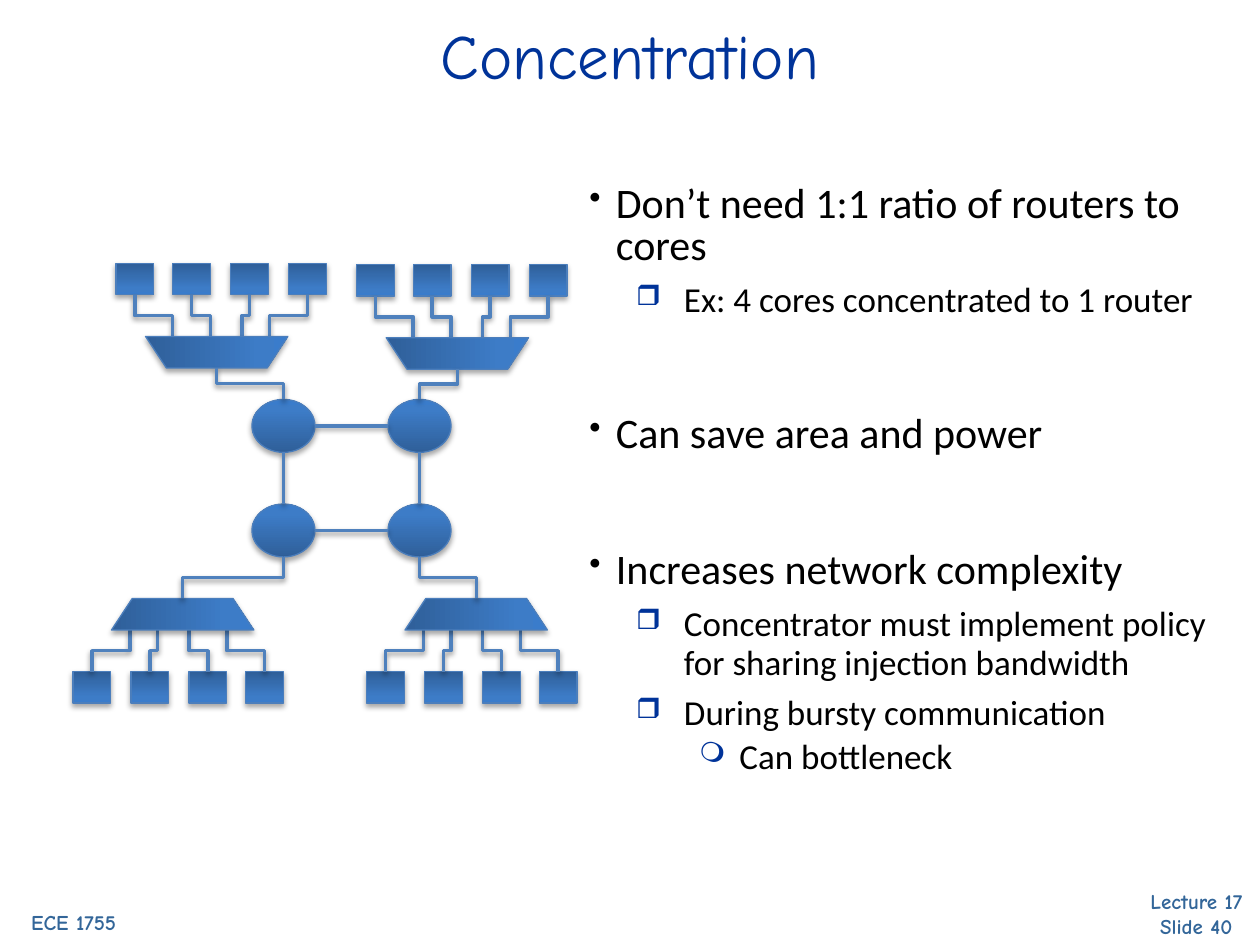
"""Build the Concentration slide: four core clusters sharing a network of four routers."""
from dataclasses import dataclass
from itertools import product

from lxml.etree import SubElement
from pptx import Presentation
from pptx.dml.color import RGBColor
from pptx.enum.shapes import MSO_CONNECTOR, MSO_SHAPE
from pptx.enum.text import PP_ALIGN
from pptx.oxml import parse_xml
from pptx.oxml.ns import nsdecls, qn
from pptx.util import Inches, Pt


@dataclass(frozen=True)
class Theme:
    heading_font: str = "Comic Neue"
    body_font: str = "Calibri"
    navy: str = "003399"
    footer: str = "336699"
    black: str = "000000"
    outline: str = "4B7EBC"
    wire: str = "4F81BD"
    gradient: tuple = ((0, "2F5F99"), (80, "3D7CC7"), (100, "3A7CCB"))
    title_size: int = 36
    footer_size: int = 12
    point_size: int = 24
    detail_size: int = 20


@dataclass(frozen=True)
class Level:
    bullet: str
    color: str
    size: int
    margin: float
    hanging: float
    line: int
    before: int


@dataclass(frozen=True)
class Point:
    text: str
    level: int = 0
    gap: int = 0


@dataclass(frozen=True)
class Cluster:
    center: float
    inner: float
    direction: int
    router: tuple


THEME = Theme()
LEVELS = (
    Level("•", THEME.black, THEME.point_size, 0.21, 0.21, 24, 15),
    Level("❒", THEME.navy, THEME.detail_size, 0.75, 0.38, 22, 7),
    Level("❍", THEME.navy, THEME.detail_size, 1.19, 0.32, 20, 5),
)
SECTION_GAP = 39
POINTS = (
    Point("Don’t need 1:1 ratio of routers to cores"),
    Point("Ex: 4 cores concentrated to 1 router", 1),
    Point("Can save area and power", gap=SECTION_GAP),
    Point("Increases network complexity", gap=SECTION_GAP),
    Point("Concentrator must implement policy for sharing injection bandwidth", 1),
    Point("During bursty communication", 1),
    Point("Can bottleneck", 2),
)
ROUTER_COLUMNS, ROUTER_ROWS = (2.25, 3.33), (3.38, 4.21)
ROUTER_WIDTH, ROUTER_HEIGHT = 0.5, 0.42
CORE_WIDTH, BLOCK_HEIGHT, WIRE_HEIGHT = 0.3, 0.25, 0.33
CONCENTRATOR_WIDTH = 1.13
CORE_OFFSETS = (0.72, 0.26, -0.2, -0.65)
PORT_OFFSETS = (0.42, 0.2, -0.05, -0.35)
CLUSTERS = (
    Cluster(1.72, 2.92, -1, (0, 0)),
    Cluster(1.45, 4.75, 1, (0, 1)),
    Cluster(3.63, 2.93, -1, (1, 0)),
    Cluster(3.78, 4.75, 1, (1, 1)),
)


def add_box(page, left: float, top: float, width: float, height: float):
    """Add an empty wrapping text box."""
    box = page.shapes.add_textbox(Inches(left), Inches(top), Inches(width), Inches(height))
    box.text_frame.word_wrap = True
    return box


def write(box, text: str, *, font: str, size: int, color: str, bold: bool = False,
          align=PP_ALIGN.LEFT, level: int | None = None, gap: int = 0) -> None:
    """Write one paragraph into a box, bulleted when a level is given."""
    frame = box.text_frame
    para = frame.add_paragraph() if frame.text else frame.paragraphs[0]
    para.text = text
    para.alignment = align
    for span in para.runs:
        span.font.name, span.font.size, span.font.bold = font, Pt(size), bold
        span.font.color.rgb = RGBColor.from_string(color)
    if level is None:
        return
    style = LEVELS[level]
    para.level = level
    para.line_spacing = Pt(style.line)
    para.space_before = Pt(style.before + gap)
    properties = para._p.get_or_add_pPr()
    properties.set("marL", str(Inches(style.margin)))
    properties.set("indent", str(-Inches(style.hanging)))
    bullet_color = SubElement(properties, qn("a:buClr"))
    SubElement(bullet_color, qn("a:srgbClr"), val=style.color)
    SubElement(properties, qn("a:buSzPct"), val="80000")
    SubElement(properties, qn("a:buChar"), char=style.bullet)


def add_shadow(item, distance: float, opacity: int) -> None:
    """Give a shape or connector a soft shadow straight below it."""
    item._element.spPr.append(parse_xml(
        f'<a:effectLst {nsdecls("a")}><a:outerShdw blurRad="{Pt(3.1)}" dist="{Pt(distance)}" '
        f'dir="5400000" rotWithShape="0"><a:srgbClr val="{THEME.black}">'
        f'<a:alpha val="{opacity * 1000}"/></a:srgbClr></a:outerShdw></a:effectLst>'))


def add_block(shapes, kind, center: tuple, width: float, height: float, angle: int):
    """Add a gradient block around a center point."""
    x, y = center
    block = shapes.add_shape(kind, Inches(x - width / 2), Inches(y - height / 2),
                             Inches(width), Inches(height))
    block.line.color.rgb = RGBColor.from_string(THEME.outline)
    block.line.width = Pt(0.75)
    stops = "".join(f'<a:gs pos="{position * 1000}"><a:srgbClr val="{color}"/></a:gs>'
                    for position, color in THEME.gradient)
    block._element.spPr.find(qn("a:prstGeom")).addnext(parse_xml(
        f'<a:gradFill {nsdecls("a")} rotWithShape="1"><a:gsLst>{stops}</a:gsLst>'
        f'<a:lin ang="{angle * 60000}" scaled="0"/></a:gradFill>'))
    add_shadow(block, 1.8, 35)
    return block


def add_wire(shapes, start: tuple, end: tuple, kind=MSO_CONNECTOR.STRAIGHT):
    """Add a connector between two points."""
    wire = shapes.add_connector(kind, *(Inches(value) for value in (*start, *end)))
    wire.line.color.rgb = RGBColor.from_string(THEME.wire)
    wire.line.width = Pt(2)
    add_shadow(wire, 1.6, 38)
    return wire


def add_elbow(shapes, start: tuple, end: tuple) -> None:
    """Add a bent wire that leaves and arrives vertically."""
    (x1, y1), (x2, y2) = sorted((start, end), key=lambda point: point[1])
    x, y = (x1 + x2) / 2, (y1 + y2) / 2
    half_drop, half_shift = (y2 - y1) / 2, (x2 - x1) / 2
    wire = add_wire(shapes, (x - half_drop, y + half_shift),
                    (x + half_drop, y - half_shift), MSO_CONNECTOR.ELBOW)
    wire._element.spPr.find(qn("a:xfrm")).set("rot", str(90 * 60000))


def add_cluster(page, cluster: Cluster) -> None:
    """Draw four cores, their concentrator and the wire to its router."""
    shapes = page.shapes.add_group_shape().shapes
    x, side = cluster.center, cluster.direction
    port_y = cluster.inner + side * BLOCK_HEIGHT
    core_y = port_y + side * WIRE_HEIGHT
    for core, port in zip(CORE_OFFSETS, PORT_OFFSETS):
        core_x = x - side * core
        add_block(shapes, MSO_SHAPE.RECTANGLE, (core_x, core_y + side * BLOCK_HEIGHT / 2),
                  CORE_WIDTH, BLOCK_HEIGHT, 90)
        add_elbow(shapes, (core_x, core_y), (x - side * port, port_y))
    turn = 180 if side < 0 else 0
    concentrator = add_block(shapes, MSO_SHAPE.TRAPEZOID, (x, (cluster.inner + port_y) / 2),
                             CONCENTRATOR_WIDTH, BLOCK_HEIGHT, turn)
    concentrator.adjustments[0] = 0.66
    concentrator.rotation = turn
    column, row = cluster.router
    router_edge = ROUTER_ROWS[row] + side * ROUTER_HEIGHT / 2
    add_elbow(page.shapes, (x, cluster.inner), (ROUTER_COLUMNS[column], router_edge))


def main() -> None:
    """Build and save the deck."""
    deck = Presentation()
    deck.slide_width, deck.slide_height = Inches(10), Inches(7.5)
    page = deck.slides.add_slide(deck.slide_layouts[6])
    for text, place in (("Lecture 17\vSlide 40", (8.83, 7, 1.33, 0.5)),
                        ("ECE 1755", (-0.08, 7.17, 1.33, 0.3))):
        write(add_box(page, *place), text, font=THEME.heading_font, size=THEME.footer_size,
              color=THEME.footer, bold=True, align=PP_ALIGN.CENTER)
    write(add_box(page, 0.5, 0.08, 9, 1.25), "Concentration", font=THEME.heading_font,
          size=THEME.title_size, color=THEME.navy, align=PP_ALIGN.CENTER)
    body = add_box(page, 4.58, 1.42, 5.25, 5.58)
    for point in POINTS:
        write(body, point.text, font=THEME.body_font, size=LEVELS[point.level].size,
              color=THEME.black, level=point.level, gap=point.gap)
    for center in product(ROUTER_COLUMNS, ROUTER_ROWS):
        add_block(page.shapes, MSO_SHAPE.OVAL, center, ROUTER_WIDTH, ROUTER_HEIGHT, 270)
    for cluster in CLUSTERS:
        add_cluster(page, cluster)
    (left, right), (top, bottom) = ROUTER_COLUMNS, ROUTER_ROWS
    for y in ROUTER_ROWS:
        add_wire(page.shapes, (left + ROUTER_WIDTH / 2, y), (right - ROUTER_WIDTH / 2, y))
    for x in ROUTER_COLUMNS:
        add_wire(page.shapes, (x, top + ROUTER_HEIGHT / 2), (x, bottom - ROUTER_HEIGHT / 2))
    deck.save("out.pptx")


if __name__ == "__main__":
    main()
